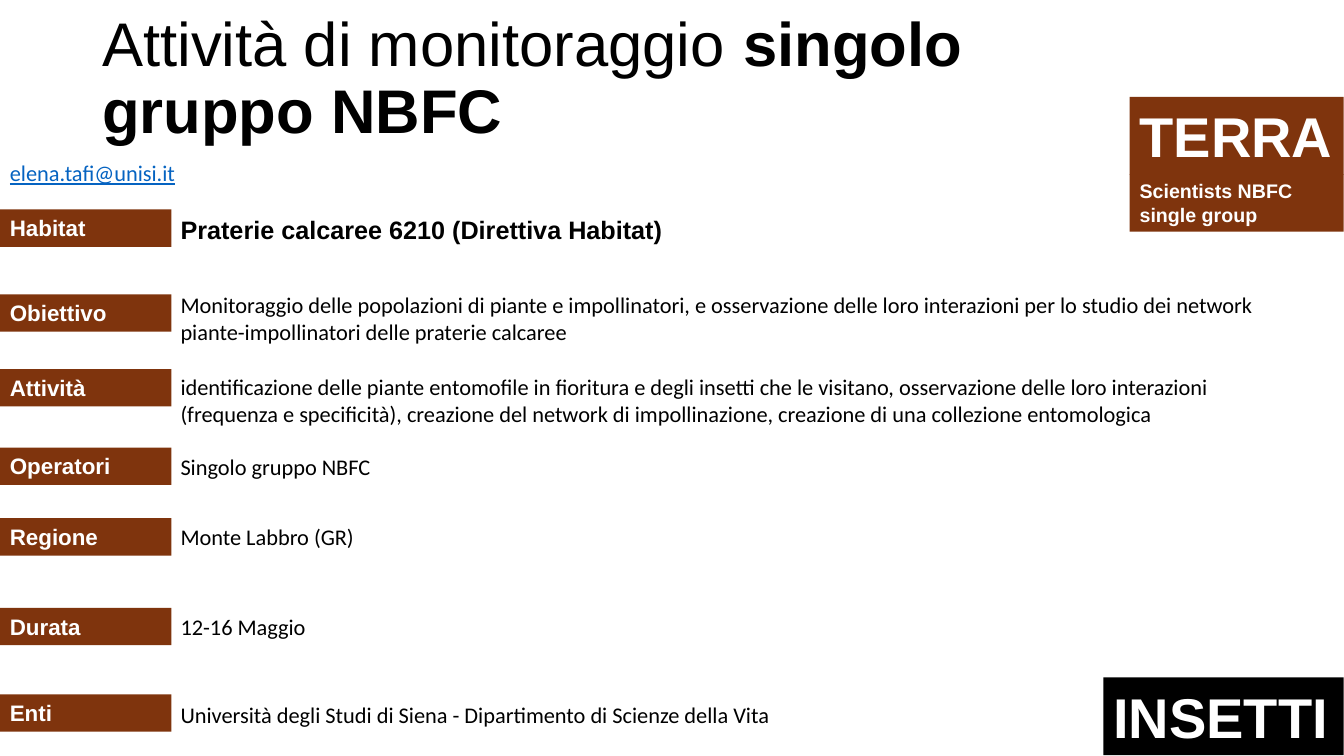
from dataclasses import dataclass

from pptx import Presentation
from pptx.dml.color import RGBColor
from pptx.enum.shapes import MSO_SHAPE
from pptx.enum.text import MSO_ANCHOR, PP_ALIGN
from pptx.shapes.autoshape import Shape
from pptx.slide import Slide
from pptx.util import Cm, Pt

BROWN, BLACK, WHITE, LINK_BLUE = "7F340D", "000000", "FFFFFF", "0563C1"
LABEL_WIDTH, LABEL_HEIGHT = 4.32, 0.94
VALUE_LEFT, VALUE_WIDTH = 4.3, 28.28


@dataclass
class Box:
    left: float
    top: float
    width: float
    height: float


@dataclass
class Style:
    size: float = 16
    font: str = "Calibri"
    color: str = BLACK
    bold: bool = False
    underline: bool = False
    line_spacing: float = 1.0
    align: PP_ALIGN = PP_ALIGN.LEFT


@dataclass
class Row:
    label: str
    value: str
    label_top: float
    value_top: float
    value_height: float
    style: Style


@dataclass
class Badge:
    text: str
    box: Box
    fill: str
    size: float


BODY = Style()
LOOSE = Style(line_spacing=1.07)
ROWS = [
    Row("Habitat", "Praterie calcaree 6210 (Direttiva Habitat)",
        5.28, 5.28, 1.02, Style(18, "Arial", bold=True)),
    Row("Obiettivo",
        "Monitoraggio delle popolazioni di piante e impollinatori, e osservazione delle loro "
        "interazioni per lo studio dei network piante-impollinatori delle praterie calcaree",
        7.42, 7.21, 1.63, BODY),
    Row("Attività",
        "identificazione delle piante entomofile in fioritura e degli insetti che le visitano, "
        "osservazione delle loro interazioni (frequenza e specificità), creazione del network "
        "di impollinazione, creazione di una collezione entomologica",
        9.3, 9.27, 2.31, BODY),
    Row("Operatori", "Singolo gruppo NBFC", 11.28, 11.25, 0.97,
        Style(line_spacing=1.07, align=PP_ALIGN.JUSTIFY)),
    Row("Regione", "Monte Labbro (GR)", 13.06, 13.06, 0.94, BODY),
    Row("Durata", "12-16 Maggio", 15.32, 15.32, 0.94, BODY),
    Row("Enti", "Università degli Studi di Siena - Dipartimento di Scienze della Vita",
        17.5, 17.5, 0.94, LOOSE),
]
BADGES = [
    Badge("Scientists NBFC single group", Box(28.47, 4.39, 5.39, 1.45), BROWN, 14),
    Badge("TERRA", Box(28.47, 2.44, 5.39, 1.96), BROWN, 40),
    Badge("INSETTI", Box(27.81, 17.07, 6.05, 1.96), BLACK, 40),
]


def rgb(value: str) -> RGBColor:
    return RGBColor.from_string(value)


def write(shape: Shape, text: str, style: Style) -> None:
    frame = shape.text_frame
    frame.word_wrap = True
    frame.vertical_anchor = MSO_ANCHOR.TOP
    frame.text = text
    paragraph = frame.paragraphs[0]
    paragraph.alignment = style.align
    paragraph.line_spacing = style.line_spacing
    for run in paragraph.runs:
        format_run(run.font, style)


def format_run(font, style: Style) -> None:
    font.name = style.font
    font.size = Pt(style.size)
    font.bold = style.bold
    font.underline = style.underline
    font.color.rgb = rgb(style.color)


def add_text(slide: Slide, box: Box, text: str, style: Style) -> Shape:
    shape = slide.shapes.add_textbox(Cm(box.left), Cm(box.top), Cm(box.width), Cm(box.height))
    write(shape, text, style)
    return shape


def add_badge(slide: Slide, badge: Badge) -> None:
    box = badge.box
    shape = slide.shapes.add_shape(
        MSO_SHAPE.RECTANGLE, Cm(box.left), Cm(box.top), Cm(box.width), Cm(box.height))
    shape.shadow.inherit = False
    shape.fill.solid()
    shape.fill.fore_color.rgb = rgb(badge.fill)
    shape.line.fill.background()
    write(shape, badge.text, Style(badge.size, "Arial", WHITE, bold=True))


def add_title(slide: Slide) -> None:
    style = Style(44, "Arial", line_spacing=0.9)
    title = add_text(slide, Box(2.33, 0.18, 27.18, 3.68), "Attività di monitoraggio ", style)
    title.text_frame.vertical_anchor = MSO_ANCHOR.MIDDLE
    group = title.text_frame.paragraphs[0].add_run()
    group.text = "singolo gruppo NBFC"
    format_run(group.font, Style(44, "Arial", bold=True))


def main() -> None:
    presentation = Presentation()
    presentation.slide_width, presentation.slide_height = Cm(33.87), Cm(19.05)
    slide = presentation.slides.add_slide(presentation.slide_layouts[6])

    add_title(slide)
    add_text(slide, Box(0, 3.84, 23.95, 0.97), "elena.tafi@unisi.it",
             Style(color=LINK_BLUE, underline=True, line_spacing=1.07))
    for row in ROWS:
        label_box = Box(0, row.label_top, LABEL_WIDTH, LABEL_HEIGHT)
        add_badge(slide, Badge(row.label, label_box, BROWN, 16))
        value_box = Box(VALUE_LEFT, row.value_top, VALUE_WIDTH, row.value_height)
        add_text(slide, value_box, row.value, row.style)
    for badge in BADGES:
        add_badge(slide, badge)

    presentation.save("out.pptx")


if __name__ == "__main__":
    main()
